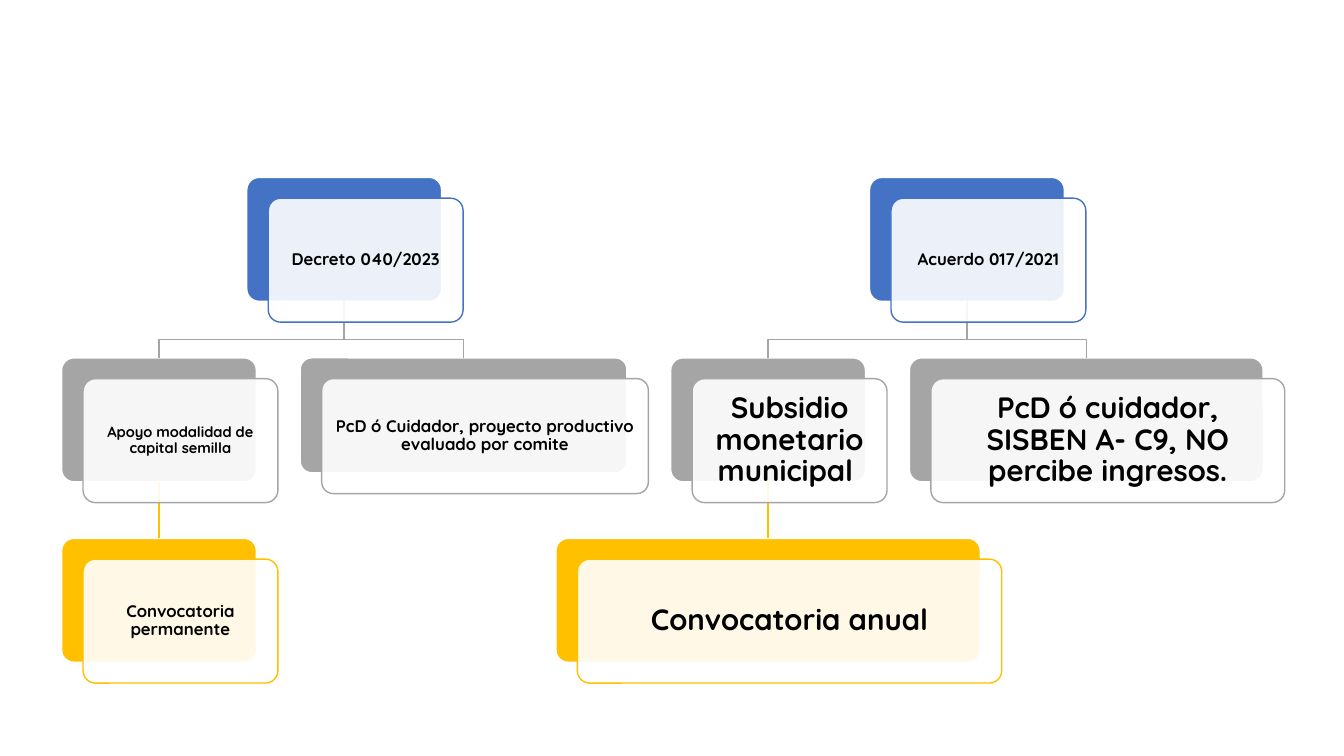
from dataclasses import dataclass

from lxml import etree
from pptx import Presentation
from pptx.dml.color import RGBColor
from pptx.enum.shapes import MSO_CONNECTOR, MSO_SHAPE
from pptx.enum.text import MSO_ANCHOR, PP_ALIGN
from pptx.oxml.ns import qn
from pptx.util import Inches, Pt

ROUND = MSO_SHAPE.ROUNDED_RECTANGLE
LINE = MSO_CONNECTOR.STRAIGHT
MIDDLE = MSO_ANCHOR.MIDDLE
CENTER = PP_ALIGN.CENTER
BOTTOM, TOP = 2, 0


@dataclass(frozen=True)
class Theme:
    font: str = "Quicksand"
    ink: str = "000000"
    paper: str = "FFFFFF"
    levels: tuple = ("4472C4", "A5A5A5", "FFC000")
    tiny: float = 10.5
    small: float = 12
    large: float = 21


# Shares of the slide's size, in percent
LEFT, GAP = 4.58, 3.26
FIRST, PITCH = 23.47, 23.87
WIDE, HIGH = 14.5, 16.4
SHIFT_X, SHIFT_Y = 1.6, 2.75
BEND = 2.4


@dataclass
class Node:
    text: str
    level: int
    size: float
    mid: float
    wide: float = WIDE
    high: float = HIGH
    back: object = None

    @property
    def left(self):
        return self.mid - self.wide / 2

    @property
    def top(self):
        return FIRST + PITCH * self.level


def rgb(code):
    return RGBColor.from_string(code)


def write(shape, text, font, size, color, inset, bold=True):
    frame = shape.text_frame
    frame.word_wrap = True
    frame.vertical_anchor = MIDDLE
    frame.margin_left = frame.margin_right = Inches(inset)
    frame.margin_top = frame.margin_bottom = Inches(inset)
    para = frame.paragraphs[0]
    para.alignment = CENTER
    para.line_spacing = 0.9
    run = para.add_run()
    run.text = text
    run.font.name = font
    run.font.size = Pt(size)
    run.font.bold = bold
    run.font.color.rgb = rgb(color)


class Chart:
    def __init__(self, deck, theme):
        self.theme = theme
        self.wide, self.high = deck.slide_width, deck.slide_height
        self.shapes = deck.slides.add_slide(deck.slide_layouts[6]).shapes

    def x(self, share):
        return round(self.wide * share / 100)

    def y(self, share):
        return round(self.high * share / 100)

    def box(self, node, fill, line, dx=0, dy=0):
        box = self.shapes.add_shape(
            ROUND, self.x(node.left + dx), self.y(node.top + dy),
            self.x(node.wide), self.y(node.high))
        box.adjustments[0] = 0.1
        box.shadow.inherit = False
        box.fill.solid()
        box.fill.fore_color.rgb = rgb(fill)
        box.line.color.rgb = rgb(line)
        box.line.width = Pt(1)
        return box

    def rear(self, node):
        node.back = self.box(node, self.theme.levels[node.level], self.theme.paper)

    def front(self, node):
        theme = self.theme
        card = self.box(node, theme.paper, theme.levels[node.level], SHIFT_X, SHIFT_Y)
        color = card.fill._xPr.find(qn("a:solidFill"))[0]
        etree.SubElement(color, qn("a:alpha")).set("val", "90000")
        inset = 0.09 if node.size == theme.large else 0.05
        write(card, node.text, theme.font, node.size, theme.ink, inset)

    def drop(self, upper, lower):
        line = self.shapes.add_connector(LINE, 0, 0, 0, 0)
        line.begin_connect(upper.back, BOTTOM)
        line.end_connect(lower.back, TOP)
        etree.SubElement(line._element.spPr, qn("a:effectLst"))
        self.ink(line, lower)

    def elbow(self, upper, lower):
        start, end = self.x(upper.mid), self.x(lower.mid)
        bend = self.y(lower.top - BEND)
        path = self.shapes.build_freeform(start, self.y(upper.top + upper.high))
        path.add_line_segments(
            [(start, bend), (end, bend), (end, self.y(lower.top))], close=False)
        line = path.convert_to_shape()
        line.fill.background()
        line.shadow.inherit = False
        self.ink(line, lower)

    def ink(self, line, node):
        line.line.color.rgb = rgb(self.theme.levels[node.level])
        line.line.width = Pt(1)


def main():
    deck = Presentation()
    deck.slide_width, deck.slide_height = Inches(13.33), Inches(7.5)
    theme = Theme()
    chart = Chart(deck, theme)

    # Middle row, set out from left to right
    row = []
    left = LEFT
    for text, size, wide, high in (
        ("Apoyo modalidad de capital semilla", theme.tiny, WIDE, HIGH),
        ("PcD ó Cuidador, proyecto productivo evaluado por comite",
         theme.small, 24.3, 15.2),
        ("Subsidio monetario municipal ", theme.large, WIDE, HIGH),
        ("PcD ó cuidador, SISBEN A- C9, NO percibe ingresos.",
         theme.large, 26.33, HIGH),
    ):
        row.append(Node(text, 1, size, left + wide / 2, wide, high))
        left += wide + GAP
    seed, project, grant, carer = row

    # Each root is centred over its pair
    pairs = ((seed, project), (grant, carer))
    roots = [
        Node(text, 0, theme.small, (a.left + b.left + b.wide) / 2)
        for text, (a, b) in zip(("Decreto 040/2023", "Acuerdo 017/2021"), pairs)
    ]

    # Each call is centred under its grant
    calls = [
        Node("Convocatoria permanente", 2, theme.small, seed.mid),
        Node("Convocatoria anual", 2, theme.large, grant.mid, 31.58),
    ]

    # Rear cards, then links, then front cards
    nodes = roots + row + calls
    for node in nodes:
        chart.rear(node)
    for root, pair, call in zip(roots, pairs, calls):
        for child in pair:
            chart.elbow(root, child)
        chart.drop(pair[0], call)
    for node in nodes:
        chart.front(node)

    deck.save("out.pptx")


if __name__ == "__main__":
    main()
